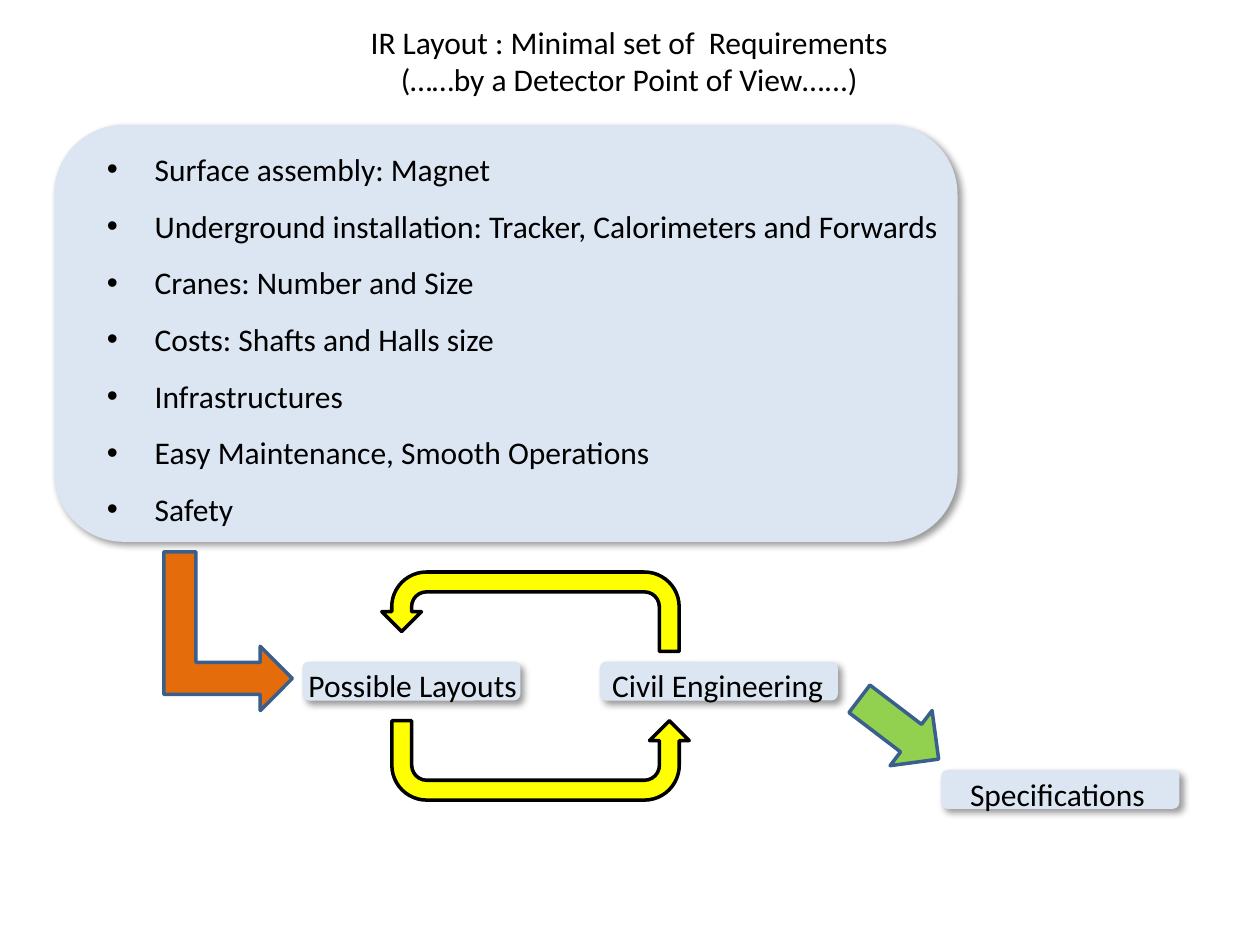
from lxml import etree
from pptx import Presentation
from pptx.dml.color import RGBColor
from pptx.enum import shapes, text
from pptx.oxml import ns
from pptx.util import Inches, Pt

PANEL, OUTLINE, BLACK = "DCE6F2", "3A5F8C", "000000"
REQUIREMENTS = [
    "Surface assembly: Magnet",
    "Underground installation: Tracker, Calorimeters and Forwards",
    "Cranes: Number and Size",
    "Costs: Shafts and Halls size",
    "Infrastructures",
    "Easy Maintenance, Smooth Operations",
    "Safety",
]


def color(hex_code):
    """Turn a hex string into a colour."""
    return RGBColor.from_string(hex_code)


def add_text(slide, box, lines, align=text.PP_ALIGN.LEFT, spacing=1.0,
             hanging=0, bullet=None, wrap=True, size=18):
    """Add a text box with one paragraph per line."""
    frame = slide.shapes.add_textbox(*map(Inches, box)).text_frame
    frame.word_wrap = wrap
    frame.auto_size = text.MSO_AUTO_SIZE.SHAPE_TO_FIT_TEXT
    for index, line in enumerate(lines):
        paragraph = frame.add_paragraph() if index else frame.paragraphs[0]
        paragraph.text = line
        paragraph.alignment = align
        paragraph.line_spacing = spacing
        properties = paragraph._p.get_or_add_pPr()
        if hanging:
            properties.set("marL", str(Inches(hanging)))
            properties.set("indent", str(-Inches(hanging)))
        if bullet:
            etree.SubElement(properties, ns.qn("a:buFont"), typeface="Arial")
            etree.SubElement(properties, ns.qn("a:buChar"), char=bullet)
        font = paragraph.runs[0].font
        font.name, font.size = "Calibri", Pt(size)
        font.color.rgb = color(BLACK)


def add_panel(slide, box):
    """Add a pale rounded panel with a soft shadow at lower right."""
    panel = slide.shapes.add_shape(
        shapes.MSO_SHAPE.ROUNDED_RECTANGLE, *map(Inches, box))
    panel.fill.solid()
    panel.fill.fore_color.rgb = color(PANEL)
    panel.line.fill.background()
    effects = etree.SubElement(panel._element.spPr, ns.qn("a:effectLst"))
    shadow = etree.SubElement(
        effects, ns.qn("a:outerShdw"), blurRad=str(Pt(4)), dist=str(Pt(3)),
        dir=str(45 * 60000), algn="tl", rotWithShape="0")
    black = etree.SubElement(shadow, ns.qn("a:srgbClr"), val=BLACK)
    etree.SubElement(black, ns.qn("a:alpha"), val="40000")


def add_arrow(slide, kind, box, fill, line=OUTLINE, rotation=0, flip=None,
              adjustments=()):
    """Add an outlined block arrow, turned and mirrored as asked."""
    arrow = slide.shapes.add_shape(kind, *map(Inches, box))
    arrow.shadow.inherit = False
    arrow.fill.solid()
    arrow.fill.fore_color.rgb = color(fill)
    arrow.line.color.rgb = color(line)
    arrow.line.width = Pt(2)
    arrow.rotation = rotation
    if flip:
        arrow._element.spPr.find(ns.qn("a:xfrm")).set(flip, "1")
    for index, value in enumerate(adjustments):
        arrow.adjustments[index] = value


def add_requirements(slide, left, top, width, height):
    """Add the panel of bulleted requirements."""
    add_panel(slide, (left, top, width, height))
    add_text(slide, (left + 0.32, top, width, height), REQUIREMENTS,
             spacing=1.5, hanging=0.38, bullet="•")


def add_stage(slide, name, left, top, width, text_shift, text_width):
    """Add a small panel with the name of a stage over it."""
    add_panel(slide, (left, top, width, 0.31))
    add_text(slide, (left + text_shift, top - 0.16, text_width, 0.51), [name],
             spacing=1.5, hanging=0.38, wrap=False)


def add_cycle(slide, left, top):
    """Add the layout and engineering stages with the loop between them."""
    add_stage(slide, "Possible Layouts", left, top + 0.71, 1.73, -0.05, 1.87)
    add_stage(slide, "Civil Engineering", left + 2.36, top + 0.71, 1.89, 0, 1.9)
    uturn = shapes.MSO_SHAPE.U_TURN_ARROW
    add_arrow(slide, uturn, (left + 0.63, top, 2.36, 0.63), "FFFF00", BLACK,
              rotation=180, flip="flipV")
    add_arrow(slide, uturn, (left + 0.71, top + 1.18, 2.36, 0.63), "FFFF00",
              BLACK, rotation=180, flip="flipH",
              adjustments=(0.25, 0.25, 0.25, 0.44, 1))


def main():
    """Build and save the slide."""
    deck = Presentation()
    deck.slide_width, deck.slide_height = Inches(10), Inches(7.5)
    slide = deck.slides.add_slide(deck.slide_layouts[6])
    add_text(slide, (2.24, 0.13, 5.51, 0.71),
             ["IR Layout : Minimal set of  Requirements",
              "(……by a Detector Point of View…...)"],
             align=text.PP_ALIGN.CENTER)
    add_requirements(slide, 0.43, 0.99, 7.17, 3.31)
    add_arrow(slide, shapes.MSO_SHAPE.BENT_UP_ARROW, (1.18, 4.5, 1.26, 1.02),
              "E46C0A", rotation=90)
    add_cycle(slide, 2.4, 4.54)
    add_stage(slide, "Specifications", 7.47, 6.11, 1.89, 0.13, 1.61)
    add_arrow(slide, shapes.MSO_SHAPE.DOWN_ARROW, (6.86, 5.39, 0.55, 0.79),
              "92D050", rotation=307.3)
    deck.save("out.pptx")


if __name__ == "__main__":
    main()
